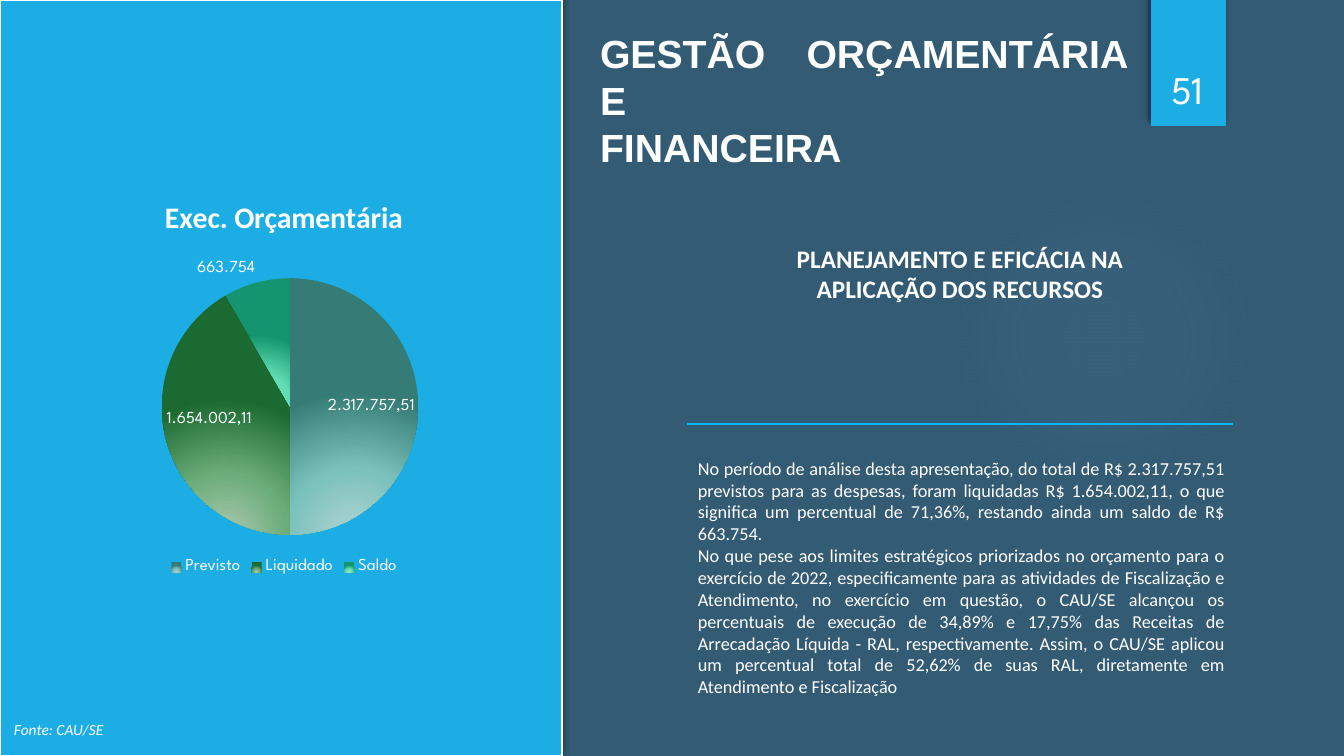
"""Builds the budget management slide with its execution pie chart."""
from lxml import etree
from pptx import Presentation
from pptx.chart.data import CategoryChartData
from pptx.dml.color import RGBColor
from pptx.enum.chart import XL_CHART_TYPE, XL_LABEL_POSITION, XL_LEGEND_POSITION
from pptx.enum.shapes import MSO_CONNECTOR, MSO_SHAPE
from pptx.enum.text import MSO_ANCHOR, MSO_AUTO_SIZE, PP_ALIGN
from pptx.oxml.ns import qn
from pptx.util import Pt

PX = 9071.43
LEFT, CENTER, JUSTIFY = PP_ALIGN.LEFT, PP_ALIGN.CENTER, PP_ALIGN.JUSTIFY
TOP, BOTTOM = MSO_ANCHOR.TOP, MSO_ANCHOR.BOTTOM
BEST_FIT = XL_LABEL_POSITION.BEST_FIT
WHITE = RGBColor(0xFF, 0xFF, 0xFF)
NAVY = RGBColor(0x33, 0x5B, 0x74)
SKY = RGBColor(0x1C, 0xAD, 0xE4)
RULE = RGBColor(0x08, 0xB6, 0xF8)
DISPLAY = "League Spartan"


def write(frame, *lines, size, font="Calibri", bold=False, italic=False, align=LEFT, anchor=None):
    """Fill a text frame with one formatted paragraph per line."""
    if anchor is not None:
        frame.word_wrap = True
        frame.auto_size = MSO_AUTO_SIZE.NONE
        frame.vertical_anchor = anchor
    for index, line in enumerate(lines):
        para = frame.paragraphs[0] if index == 0 else frame.add_paragraph()
        para.text = line
        para.alignment = align
        for span in para.runs:
            span.font.size = Pt(size)
            span.font.name = font
            span.font.bold = bold
            span.font.italic = italic
            span.font.color.rgb = WHITE


def set_radial(gradient, stops, top, bottom):
    """Replace a gradient with circular stops of position, colour and opacity."""
    for child in list(gradient):
        gradient.remove(child)
    stop_list = etree.SubElement(gradient, qn("a:gsLst"))
    for position, color, opacity in stops:
        stop = etree.SubElement(stop_list, qn("a:gs"), pos=str(position * 1000))
        tint = etree.SubElement(stop, qn("a:srgbClr"), val=color)
        etree.SubElement(tint, qn("a:alpha"), val=str(opacity * 1000))
    shade = etree.SubElement(gradient, qn("a:path"), path="circle")
    etree.SubElement(shade, qn("a:fillToRect"), l="50000", t=str(top * 1000),
                     r="50000", b=str(bottom * 1000))


deck = Presentation()
deck.slide_width, deck.slide_height = round(1344 * PX), round(756 * PX)
page = deck.slides.add_slide(deck.slide_layouts[5])
page.background.fill.solid()
page.background.fill.fore_color.rgb = NAVY

glow = page.shapes.add_shape(MSO_SHAPE.OVAL, *(round(v * PX) for v in (949, 184, 310, 310)))
glow.shadow.inherit = False
glow.line.fill.background()
glow.fill.gradient()
set_radial(glow.element.find(".//" + qn("a:gradFill")),
           [(0, "70A1C0", 7), (36, "70A1C0", 6), (69, "70A1C0", 0)], 50, 50)

PANELS = [
    ((1151, 0, 75, 126), 0, 60, 4, 3),
    ((0, 0, 562, 756), 2, 50, 5, 2),
]
for place, border, opacity, blur, distance in PANELS:
    panel = page.shapes.add_shape(MSO_SHAPE.RECTANGLE, *(round(v * PX) for v in place))
    panel.fill.solid()
    panel.fill.fore_color.rgb = SKY
    if border:
        panel.line.color.rgb = WHITE
        panel.line.width = Pt(border)
    else:
        panel.line.fill.background()
    panel.shadow.inherit = False
    shadow = etree.SubElement(panel.element.spPr.find(qn("a:effectLst")), qn("a:outerShdw"),
                              blurRad=str(Pt(blur)), dist=str(Pt(distance)),
                              dir=str(245 * 60000), rotWithShape="0")
    shade_color = etree.SubElement(shadow, qn("a:srgbClr"), val="000000")
    etree.SubElement(shade_color, qn("a:alpha"), val=str(opacity * 1000))

divider = page.shapes.add_connector(MSO_CONNECTOR.STRAIGHT,
                                    *(round(v * PX) for v in (687, 424, 1233, 424)))
divider.line.color.rgb = RULE
divider.line.width = Pt(0.75)
etree.SubElement(divider.element.spPr, qn("a:effectLst"))

title = page.shapes.title
title.left, title.top, title.width, title.height = (round(v * PX) for v in (590, 24, 547, 105))
write(title.text_frame, "GESTÃO ORÇAMENTÁRIA E \vFINANCEIRA",
      size=28, font="Arial", bold=True, align=JUSTIFY, anchor=TOP)

TEXTS = [
    ((1141, 32, 93, 85), ["51"],
     dict(size=28, font=DISPLAY, align=CENTER, anchor=BOTTOM)),
    ((4, 715, 261, 29), ["Fonte: CAU/SE"], dict(size=11, italic=True, anchor=TOP)),
    ((688, 452, 546, 253), [
        "No período de análise desta apresentação, do total de R$ 2.317.757,51 previstos para "
        "as despesas, foram liquidadas R$ 1.654.002,11, o que significa um percentual de 71,36%, "
        "restando ainda um saldo de R$ 663.754.",
        "No que pese aos limites estratégicos priorizados no orçamento para o exercício de 2022, "
        "especificamente para as atividades de Fiscalização e Atendimento, no exercício em "
        "questão, o CAU/SE alcançou os percentuais de execução de 34,89% e 17,75% das Receitas "
        "de Arrecadação Líquida - RAL, respectivamente. Assim, o CAU/SE aplicou um percentual "
        "total de 52,62% de suas RAL, diretamente em Atendimento e Fiscalização",
    ], dict(size=13, align=JUSTIFY, anchor=TOP)),
    ((749, 238, 422, 72), ["PLANEJAMENTO E EFICÁCIA NA APLICAÇÃO DOS RECURSOS"],
     dict(size=18, bold=True, align=CENTER, anchor=TOP)),
]
for place, lines, style in TEXTS:
    box = page.shapes.add_textbox(*(round(v * PX) for v in place))
    write(box.text_frame, *lines, **style)

SLICES = [
    ("Previsto", 2347270, "2.317.757,51", ("B0D5D3", "7BC1BC", "357B76")),
    ("Liquidado", 1954932, "1.654.002,11", ("AAC9B0", "6BAC79", "1B6A31")),
    ("Saldo", 392338, "663.754", ("A4E5CC", "61DDB2", "14956F")),
]
data = CategoryChartData(number_format="#,##0.00")
data.categories = [entry[0] for entry in SLICES]
data.add_series("Exec. Orçamentária", [entry[1] for entry in SLICES])
chart = page.shapes.add_chart(XL_CHART_TYPE.PIE,
                              *(round(v * PX) for v in (-17, 178, 602, 401)), data).chart
chart.font.size = Pt(10)
chart.font.name = DISPLAY
chart.font.color.rgb = WHITE
chart.has_title = True
chart.chart_title.include_in_layout = False
write(chart.chart_title.text_frame, "Exec. Orçamentária", size=21.3, bold=True, align=CENTER)
chart.has_legend = True
chart.legend.position = XL_LEGEND_POSITION.BOTTOM
chart.legend.include_in_layout = False

pie = chart.plots[0]
pie.vary_by_categories = True
series = pie.series[0]
labels = series.data_labels
labels.show_value = True
labels.number_format = "#,##0.00"
labels.number_format_is_linked = False
labels.position = BEST_FIT
for font in (chart.legend.font, labels.font):
    font.size = Pt(12)
    font.name = DISPLAY
    font.color.rgb = WHITE
for index, (name, value, caption, colors) in enumerate(SLICES):
    point = series.points[index]
    point.format.line.fill.background()
    point.format.fill.gradient()
    gradient = chart.element.findall(".//" + qn("a:gradFill"))[index]
    set_radial(gradient, [(stop, color, 100) for stop, color in zip((0, 46, 100), colors)],
               155, -55)
    write(point.data_label.text_frame, caption, size=12, font=DISPLAY, align=CENTER)
    point.data_label.position = BEST_FIT

plot_area = chart.element.find(".//" + qn("c:plotArea"))
layout = plot_area.find(qn("c:layout"))
if layout is None:
    layout = etree.Element(qn("c:layout"))
    plot_area.insert(0, layout)
manual = etree.SubElement(layout, qn("c:manualLayout"))
for tag, setting in (("layoutTarget", "inner"), ("xMode", "edge"), ("yMode", "edge"),
                     ("x", "0.29"), ("y", "0.25"), ("w", "0.44"), ("h", "0.64")):
    etree.SubElement(manual, qn("c:" + tag), val=setting)

deck.save("out.pptx")
